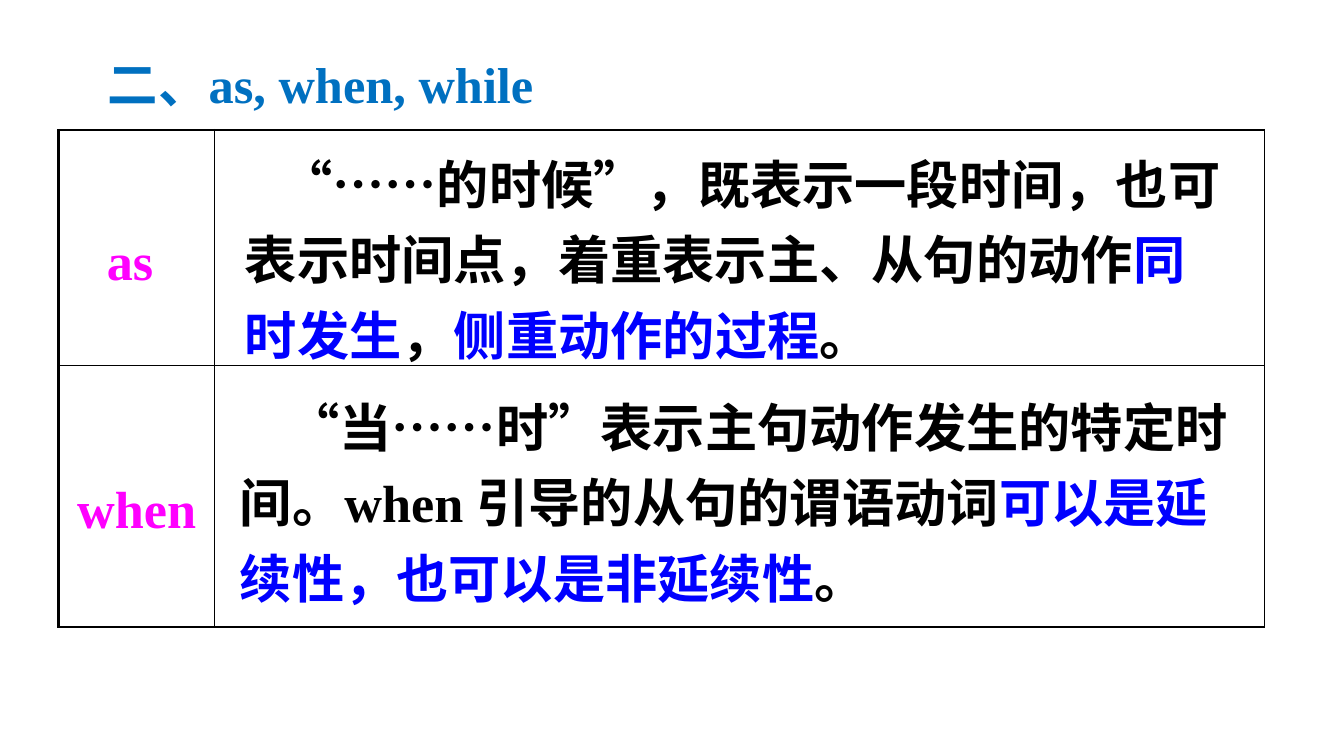
"""Build a slide comparing the conjunctions as, when and while."""
import pptx
import pptx.dml.color
import pptx.enum.text
import pptx.oxml
import pptx.oxml.ns
import pptx.util
from pptx.util import Inches

RGB = pptx.dml.color.RGBColor.from_string
THEME = {
    "title": "0070C0", "word": "FF00FF", "text": "000000", "key": "0000FF", "line": "000000",
    "title_size": 36, "body_size": 37.3,
    "latin": "Times New Roman", "cjk": "Noto Sans CJK SC", "title_font": "Arial",
}


def style(font, size, name):
    font.size, font.bold, font.name = pptx.util.Pt(size), True, name
    ea = pptx.oxml.parse_xml(f'<a:ea {pptx.oxml.ns.nsdecls("a")} typeface="{THEME["cjk"]}"/>')
    font._element.find(pptx.oxml.ns.qn("a:latin")).addnext(ea)


def add_text(s, box, runs, size, name, spacing, indent=0):
    tb = s.shapes.add_textbox(*[Inches(v) for v in box])
    tf = tb.text_frame
    tf.word_wrap = True
    tf.margin_right = Inches(0.05)
    p = tf.paragraphs[0]
    p.line_spacing = pptx.util.Pt(spacing)
    p._p.get_or_add_pPr().set("indent", str(Inches(indent)))
    for text, color, run_font in runs:
        r = p.add_run()
        r.text = text
        style(r.font, size, run_font or name)
        r.font.color.rgb = RGB(THEME[color])


prs = pptx.Presentation()
prs.slide_width, prs.slide_height = Inches(13.33), Inches(7.5)
s = prs.slides.add_slide(prs.slide_layouts[6])

words = ["as ", "when"]
table = s.shapes.add_table(2, 2, Inches(0.58), Inches(1.29), Inches(11.96), Inches(4.93)).table
table.first_row = table.horz_banding = False
for column, width in zip(table.columns, [1.55, 10.41]):
    column.width = Inches(width)
for row, height in zip(table.rows, [2.34, 2.59]):
    row.height = Inches(height)

for i, word in enumerate(words):
    for j in range(2):
        cell = table.cell(i, j)
        cell.fill.background()
        cell.vertical_anchor = pptx.enum.text.MSO_ANCHOR.MIDDLE
        cell.margin_left = cell.margin_right = Inches(0.13)
        cell.margin_top = cell.margin_bottom = Inches(0.07)
        weights = {"L": 1 if j else 2, "R": 1, "T": 1 if i else 2, "B": 1}
        for k, (side, weight) in enumerate(weights.items()):
            cell._tc.get_or_add_tcPr().insert(k, pptx.oxml.parse_xml(
                f'<a:ln{side} {pptx.oxml.ns.nsdecls("a")} w="{pptx.util.Pt(weight)}">'
                f'<a:solidFill><a:srgbClr val="{THEME["line"]}"/></a:solidFill></a:ln{side}>'))
    p = table.cell(i, 0).text_frame.paragraphs[0]
    p.alignment = pptx.enum.text.PP_ALIGN.CENTER
    p.line_spacing = 1.5
    r = p.add_run()
    r.text = word
    style(r.font, THEME["body_size"], THEME["latin"])
    r.font.color.rgb = RGB(THEME["word"])

as_runs = [
    ("“……的时候”，既表示一段时间，也可表示时间点，着重表示主、从句的动作", "text", None),
    ("同时发生", "key", None),
    ("，", "text", None),
    ("侧重动作的过程", "key", None),
    ("。", "text", None),
]
when_runs = [
    ("“当", "text", None),
    ("……", "text", THEME["cjk"]),
    ("时”表示主句动作发生的特定时间。when 引导的从句的谓语动词", "text", None),
    ("可以是延续性，也可以是非延续性", "key", None),
    ("。", "text", None),
]
title_runs = [("二、", "title", None), ("as, when, while", "title", THEME["latin"])]

add_text(s, (2.33, 1.33, 9.9, 2.37), as_runs, THEME["body_size"], THEME["cjk"], 54, 0.35)
add_text(s, (2.28, 3.74, 10.05, 2.37), when_runs, THEME["body_size"], THEME["latin"], 54, 0.47)
add_text(s, (0.97, 0.47, 8.98, 0.71), title_runs, THEME["title_size"], THEME["title_font"], 44)

prs.save("out.pptx")
